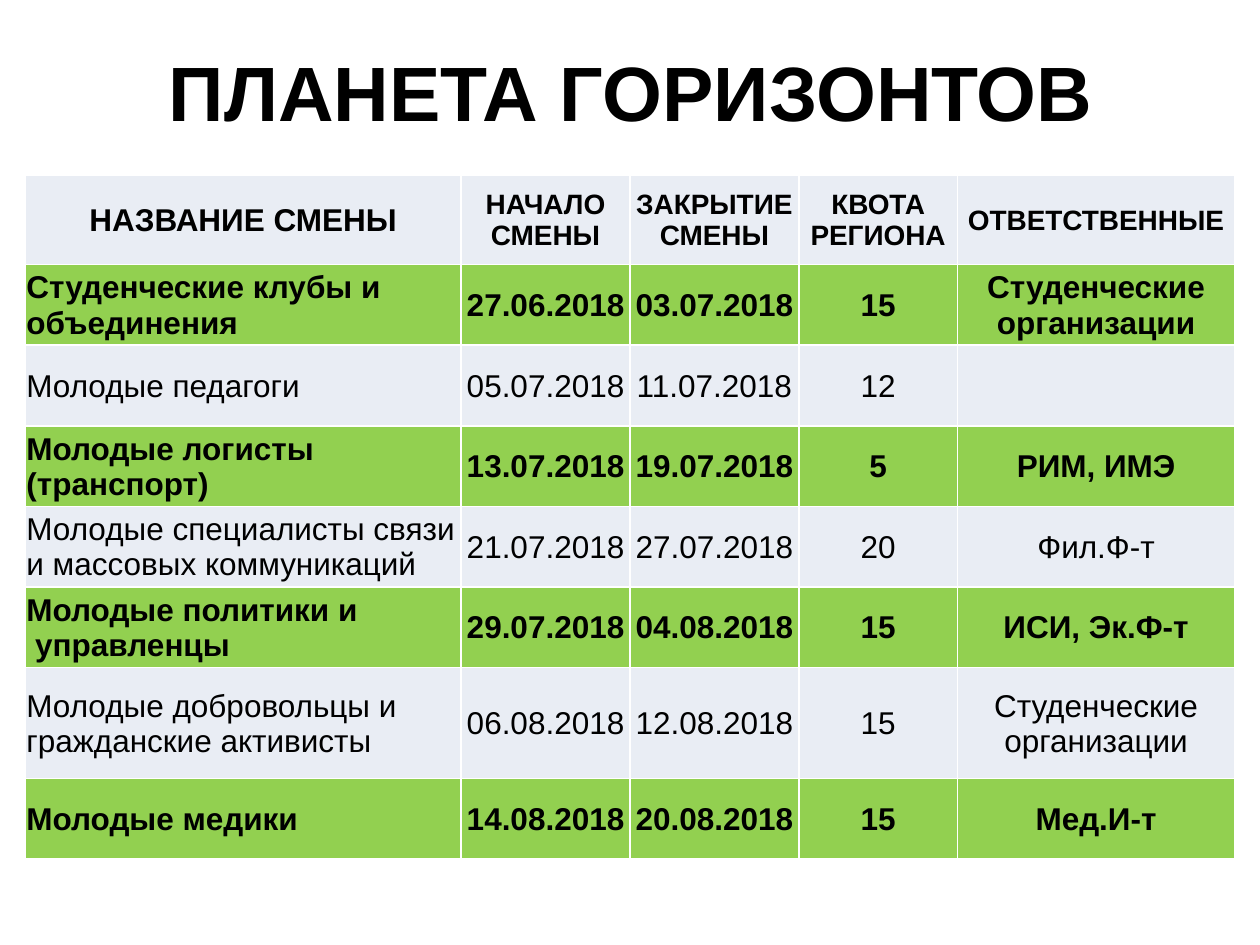
from dataclasses import dataclass

from lxml import etree
from pptx import Presentation, util as u
from pptx.dml.color import RGBColor
from pptx.enum import text
from pptx.oxml import ns


@dataclass(frozen=True)
class Theme:
    font: str = "Arial"
    ink: str = "000000"
    border: str = "FFFFFF"
    plain: str = "E9EDF4"
    highlight: str = "92D050"
    title_size: int = 44
    body_size: int = 18
    small_size: int = 16


class SlideBuilder:
    COLUMNS, ROWS = 100, 75

    def __init__(self, presentation, theme):
        self.theme = theme
        self.column = presentation.slide_width / self.COLUMNS
        self.row = presentation.slide_height / self.ROWS
        self.slide = presentation.slides.add_slide(presentation.slide_layouts[5])

    def x(self, columns):
        return u.Emu(round(columns * self.column))

    def y(self, rows):
        return u.Emu(round(rows * self.row))

    def format_text(self, frame, size, bold, alignment):
        for paragraph in frame.paragraphs:
            paragraph.alignment = alignment
            font = paragraph.font
            font.name, font.size, font.bold = self.theme.font, u.Pt(size), bold
            font.color.rgb = RGBColor.from_string(self.theme.ink)

    def title(self, wording, left, top, width, height):
        shape = self.slide.shapes.title
        shape.left, shape.top = self.x(left), self.y(top)
        shape.width, shape.height = self.x(width), self.y(height)
        frame = shape.text_frame
        frame.text = wording
        frame.vertical_anchor = text.MSO_ANCHOR.MIDDLE
        self.format_text(frame, self.theme.title_size, True, text.PP_ALIGN.CENTER)

    def borders(self, cell):
        properties = cell._tc.get_or_add_tcPr()
        for index, side in enumerate("LRTB"):
            line = etree.Element(ns.qn(f"a:ln{side}"), w=str(u.Pt(1)))
            fill = etree.SubElement(line, ns.qn("a:solidFill"))
            etree.SubElement(fill, ns.qn("a:srgbClr"), val=self.theme.border)
            properties.insert(index, line)

    def cell(self, cell, wording, size, bold, alignment, color):
        cell.text = wording
        cell.vertical_anchor = text.MSO_ANCHOR.MIDDLE
        cell.margin_left = cell.margin_right = cell.margin_top = u.Inches(0.01)
        cell.margin_bottom = 0
        cell.fill.solid()
        cell.fill.fore_color.rgb = RGBColor.from_string(color)
        self.borders(cell)
        self.format_text(cell.text_frame, size, bold, alignment)

    def table(self, records, left, top, widths, heights):
        table = self.slide.shapes.add_table(
            len(heights), len(widths), self.x(left), self.y(top),
            self.x(sum(widths)), self.y(sum(heights))).table
        for column, width in zip(table.columns, widths):
            column.width = self.x(width)
        for row, height in zip(table.rows, heights):
            row.height = self.y(height)
        for i, record in enumerate(records):
            header, highlighted = i == 0, i % 2 == 1
            color = self.theme.highlight if highlighted else self.theme.plain
            for j, wording in enumerate(record):
                small = header and j > 0
                size = self.theme.small_size if small else self.theme.body_size
                centered = header or j > 0
                alignment = text.PP_ALIGN.CENTER if centered else text.PP_ALIGN.LEFT
                self.cell(table.cell(i, j), wording, size,
                          header or highlighted, alignment, color)


SHIFTS = [
    ("НАЗВАНИЕ СМЕНЫ", "НАЧАЛО СМЕНЫ", "ЗАКРЫТИЕ СМЕНЫ", "КВОТА РЕГИОНА", "ОТВЕТСТВЕННЫЕ"),
    ("Студенческие клубы и объединения", "27.06.2018", "03.07.2018", "15",
     "Студенческие организации"),
    ("Молодые педагоги", "05.07.2018", "11.07.2018", "12", ""),
    ("Молодые логисты (транспорт)", "13.07.2018", "19.07.2018", "5", "РИМ, ИМЭ"),
    ("Молодые специалисты связи и массовых коммуникаций", "21.07.2018", "27.07.2018",
     "20", "Фил.Ф-т"),
    ("Молодые политики и\n управленцы", "29.07.2018", "04.08.2018", "15", "ИСИ, Эк.Ф-т"),
    ("Молодые добровольцы и гражданские активисты", "06.08.2018", "12.08.2018", "15",
     "Студенческие организации"),
    ("Молодые медики", "14.08.2018", "20.08.2018", "15", "Мед.И-т"),
]


def main():
    presentation = Presentation()
    presentation.slide_width, presentation.slide_height = u.Inches(10), u.Inches(7.5)
    builder = SlideBuilder(presentation, Theme())
    builder.title("ПЛАНЕТА ГОРИЗОНТОВ", 5.1, 2.1, 90, 10.2)
    builder.table(SHIFTS, left=2, top=13.9,
                  widths=[34.6, 13.4, 13.4, 12.6, 22],
                  heights=[7.1] + [6.4] * 5 + [8.8, 6.4])
    presentation.save("out.pptx")


if __name__ == "__main__":
    main()
